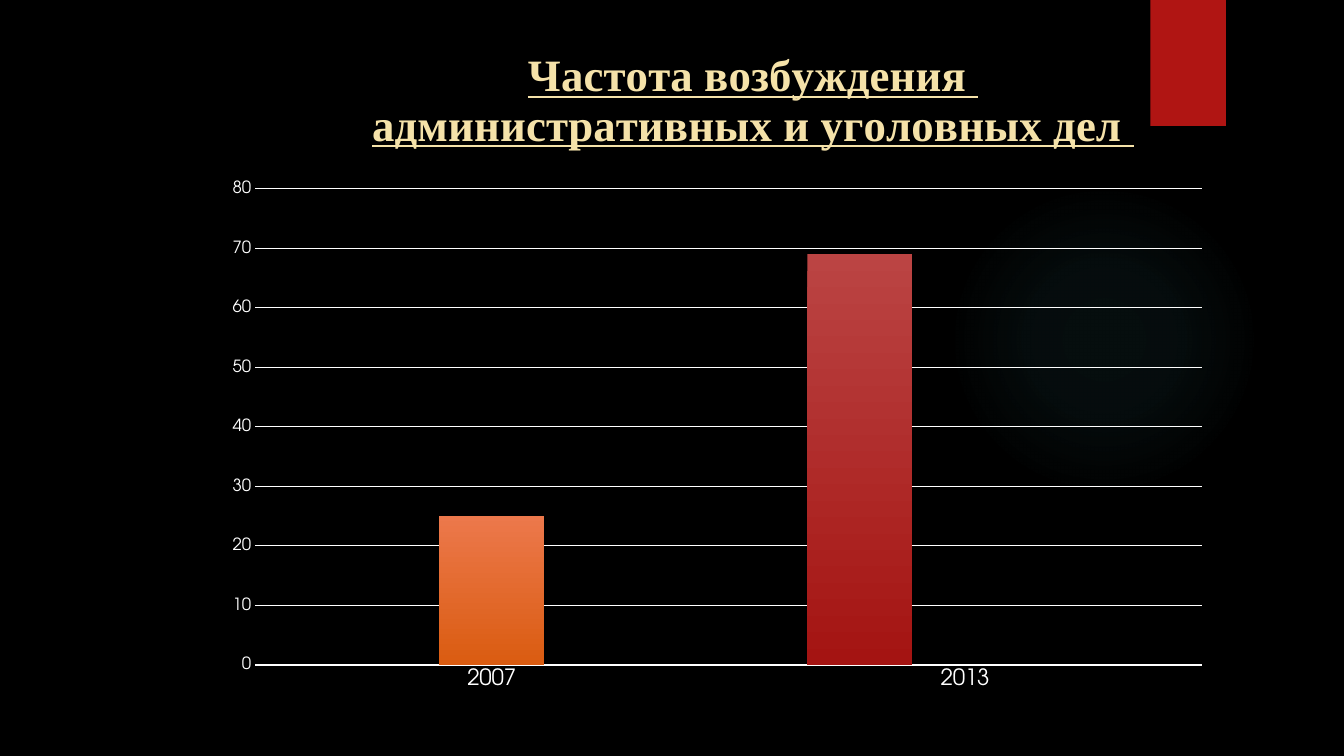
from dataclasses import dataclass

from pptx import Presentation
from pptx.chart.data import CategoryChartData
from pptx.dml.color import RGBColor
from pptx.enum.chart import XL_CHART_TYPE, XL_TICK_MARK
from pptx.enum.shapes import MSO_SHAPE
from pptx.enum.text import PP_ALIGN
from pptx.oxml import parse_xml
from pptx.oxml.ns import nsdecls
from pptx.util import Inches, Pt

COLUMNS = XL_CHART_TYPE.COLUMN_CLUSTERED
NO_TICK = XL_TICK_MARK.NONE
OVAL, RECTANGLE = MSO_SHAPE.OVAL, MSO_SHAPE.RECTANGLE
CENTER = PP_ALIGN.CENTER


@dataclass(frozen=True)
class Theme:
    background: str = "000000"
    text: str = "FFFFFF"
    title: str = "F5E2A9"
    ribbon: str = "B01513"
    glow: str = "50B9C1"
    bars: tuple = (("BB4443", "A41412"), ("EC784B", "DA5C11"), ("E8BF53", "E0B01C"))
    title_font: str = "Times New Roman"
    chart_font: str = "TeX Gyre Adventor"
    title_size: int = 32
    category_size: int = 16
    value_size: int = 12
    chart_size: int = 10


theme = Theme()


def style_font(font, name, size, color):
    font.name = name
    font.size = Pt(size)
    font.color.rgb = RGBColor.from_string(color)


def manual_layout(fields):
    """Chart layout element built from (tag, value) pairs."""
    body = "".join(f'<c:{tag} val="{value}"/>' for tag, value in fields)
    return parse_xml(f'<c:layout {nsdecls("c")}><c:manualLayout>{body}</c:manualLayout></c:layout>')


deck = Presentation()
deck.slide_width, deck.slide_height = Inches(13.33), Inches(7.5)
page = deck.slides.add_slide(deck.slide_layouts[6])
page.background.fill.solid()
page.background.fill.fore_color.rgb = RGBColor.from_string(theme.background)

# Soft round glow
glow = page.shapes.add_shape(OVAL, Inches(9.41), Inches(1.83), Inches(3.08), Inches(3.08))
glow.shadow.inherit = False
glow.line.fill.background()
stops = "".join(
    f'<a:gs pos="{place * 1000}"><a:srgbClr val="{theme.glow}">'
    f'<a:alpha val="{alpha * 1000}"/></a:srgbClr></a:gs>'
    for place, alpha in ((0, 7), (36, 6), (69, 0)))
glow.element.spPr.find("{*}prstGeom").addnext(parse_xml(
    f'<a:gradFill {nsdecls("a")}><a:gsLst>{stops}</a:gsLst><a:path path="circle">'
    '<a:fillToRect l="50000" t="50000" r="50000" b="50000"/></a:path></a:gradFill>'))

# Red ribbon with a soft shadow
ribbon = page.shapes.add_shape(RECTANGLE, Inches(11.41), 0, Inches(0.75), Inches(1.25))
ribbon.fill.solid()
ribbon.fill.fore_color.rgb = RGBColor.from_string(theme.ribbon)
ribbon.line.fill.background()
ribbon.shadow.inherit = False
ribbon.element.spPr.find("{*}effectLst").append(parse_xml(
    f'<a:outerShdw {nsdecls("a")} blurRad="{Pt(3)}" dist="{Pt(2)}" dir="5400000">'
    '<a:srgbClr val="000000"><a:alpha val="45000"/></a:srgbClr></a:outerShdw>'))

# Column chart
chart_data = CategoryChartData()
chart_data.categories = ["2007", "2013"]
for name, values in (("Series 1", (None, 69)),
                     ("Series 2", (25, None)),
                     ("Series 3", (None, None))):
    chart_data.add_series(name, values)
chart = page.shapes.add_chart(COLUMNS, Inches(2.11), Inches(0.4),
                              Inches(10.01), Inches(6.58), chart_data).chart
style_font(chart.font, theme.chart_font, theme.chart_size, theme.text)
chart.has_legend = False
plot = chart.plots[0]
plot.gap_width = 150
plot.overlap = 0
plot.vary_by_categories = False
for series, colors in zip(plot.series, theme.bars):
    fill = series.format.fill
    fill.gradient()
    fill.gradient_angle = 270
    for stop, color in zip(fill.gradient_stops, colors):
        stop.color.rgb = RGBColor.from_string(color)

# Axes and grid lines
categories, values = chart.category_axis, chart.value_axis
for axis, size in ((categories, theme.category_size), (values, theme.value_size)):
    axis.major_tick_mark = axis.minor_tick_mark = NO_TICK
    style_font(axis.tick_labels.font, theme.chart_font, size, theme.text)
values.minimum_scale, values.maximum_scale, values.major_unit = 0, 80, 10
values.format.line.fill.background()
values.has_major_gridlines = True
for line, width in ((categories.format.line, 1), (values.major_gridlines.format.line, 0.75)):
    line.color.rgb = RGBColor.from_string(theme.text)
    line.width = Pt(width)

# Chart title
chart.has_title = True
title = chart.chart_title
title.include_in_layout = False
frame = title.text_frame
for index, words in enumerate(("Частота возбуждения ", "административных и уголовных дел ")):
    para = frame.add_paragraph() if index else frame.paragraphs[0]
    para.text = words
    para.alignment = CENTER
    style_font(para.font, theme.title_font, theme.title_size, theme.title)
    para.font.bold = True
    para.font.underline = True

# Places of the title and the plot inside the chart
plot_area = chart.element.find(".//{*}plotArea")
for parent in (title.element, plot_area):
    for layout in parent.findall("{*}layout"):
        parent.remove(layout)
title.element.find("{*}tx").addnext(manual_layout(
    (("xMode", "edge"), ("yMode", "edge"), ("x", 0.155), ("y", 0.01))))
plot_area.insert(0, manual_layout(
    (("layoutTarget", "inner"), ("xMode", "edge"), ("yMode", "edge"),
     ("x", 0.042), ("y", 0.224), ("w", 0.938), ("h", 0.718))))

deck.save("out.pptx")
